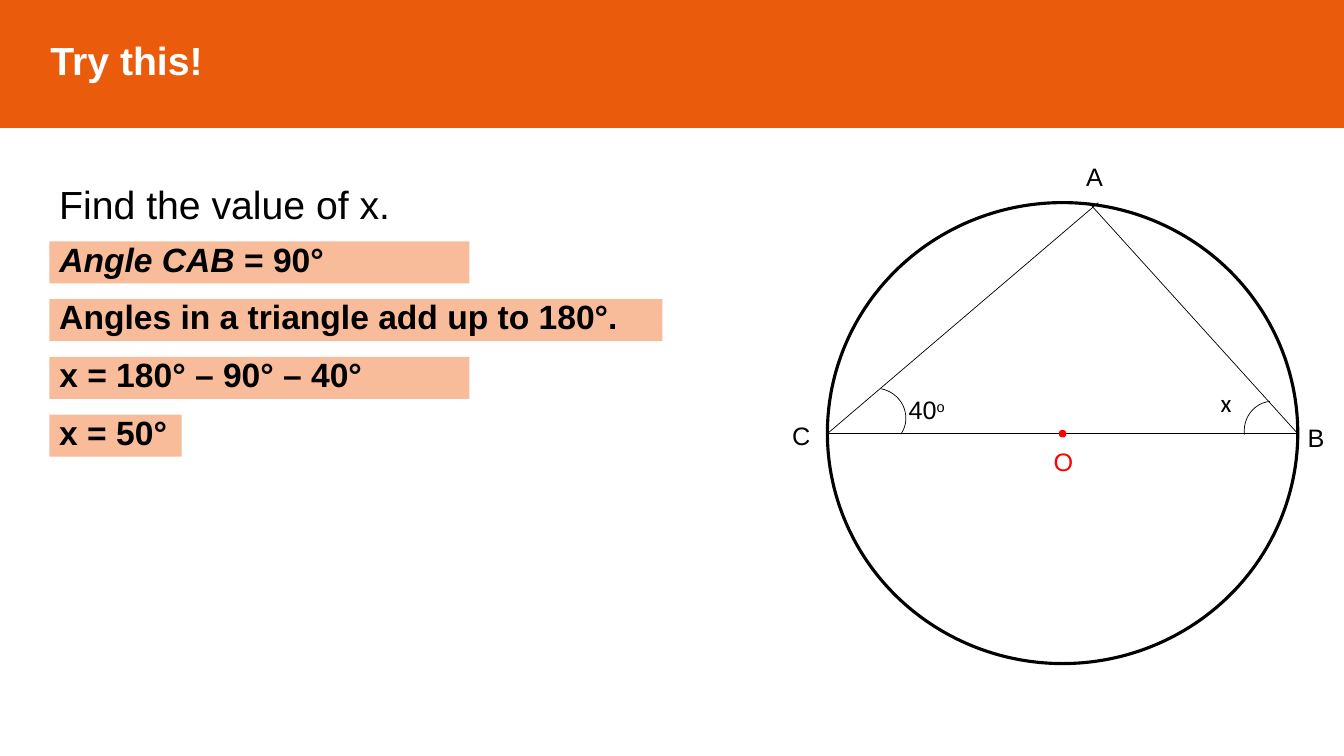
from lxml.etree import SubElement
from pptx import Presentation
from pptx.dml.color import RGBColor
from pptx.enum.shapes import MSO_CONNECTOR, MSO_SHAPE
from pptx.enum.text import MSO_ANCHOR, MSO_AUTO_SIZE, PP_ALIGN
from pptx.oxml.ns import qn
from pptx.util import Pt

ORANGE, PEACH, RED = "EA5B0C", "F9BC9A", "FF0000"
BLACK, WHITE = "000000", "FFFFFF"


def px(n):
    return round(n * 9525)


def color(code):
    return RGBColor.from_string(code)


def add_form(slide, kind, box, fill=None, line=None, width=1):
    form = slide.shapes.add_shape(kind, *map(px, box))
    form.shadow.inherit = False
    if fill:
        form.fill.solid()
        form.fill.fore_color.rgb = color(fill)
    else:
        form.fill.background()
    if line:
        form.line.color.rgb = color(line)
        form.line.width = Pt(width)
    else:
        form.line.fill.background()
    return form


def add_line(slide, start, end):
    line = slide.shapes.add_connector(
        MSO_CONNECTOR.STRAIGHT, *map(px, (*start, *end)))
    line.line.color.rgb = color(BLACK)
    line.line.width = Pt(0.5)
    SubElement(line._element.spPr, qn("a:effectLst"))


def write(form, parts, size, tint=BLACK, bold=False, font="Arial"):
    """Fill one left-aligned paragraph with a run for each part."""
    frame = form.text_frame
    frame.word_wrap = True
    frame.vertical_anchor = MSO_ANCHOR.TOP
    para = frame.paragraphs[0]
    para.alignment = PP_ALIGN.LEFT
    for part in parts:
        run = para.add_run()
        run.text = part
        run.font.size = Pt(size)
        run.font.name = font
        run.font.bold = bold
        run.font.color.rgb = color(tint)
    return para


def add_label(slide, box, parts, size=18, tint=BLACK, font="Arial"):
    label = slide.shapes.add_textbox(*map(px, box))
    para = write(label, parts, size, tint, font=font)
    label.text_frame.auto_size = MSO_AUTO_SIZE.SHAPE_TO_FIT_TEXT
    return para


def add_header(slide, box):
    bar = add_form(slide, MSO_SHAPE.RECTANGLE, box, ORANGE, ORANGE)
    write(bar, ["Try this!"], 28, WHITE, bold=True)
    bar.text_frame.vertical_anchor = MSO_ANCHOR.MIDDLE
    bar.text_frame.margin_left = px(48)


def add_circle(slide, box):
    left, top, wide, high = box
    mid_x, mid_y = left + wide // 2, top + high // 2 + 1
    right = left + wide

    # Circle, diameter and the two chords that meet at A
    add_form(slide, MSO_SHAPE.OVAL, box, WHITE, BLACK, 2.25)
    add_line(slide, (left, mid_y), (right, mid_y))
    add_line(slide, (left, mid_y), (left + 258, top))
    add_line(slide, (right, mid_y), (left + 249, top))

    # Centre point
    add_form(slide, MSO_SHAPE.OVAL, (mid_x - 3, mid_y - 3, 6, 6), RED, RED)

    # Angle marks at B and C
    arcs = [(396, 190, 263.6, None), (18, 177, 27.4, (151.589, 4.182))]
    for dx, dy, turn, ends in arcs:
        arc = add_form(slide, MSO_SHAPE.ARC, (left + dx, top + dy, 57, 55),
                       line=BLACK, width=0.5)
        arc.rotation = turn
        for i, end in enumerate(ends or ()):
            arc.adjustments[i] = end

    # Point names
    names = [("A", 237, -44, BLACK), ("O", 206, 227, RED),
             ("C", -43, 203, BLACK), ("B", wide, 204, BLACK)]
    for name, dx, dy, tint in names:
        add_label(slide, (left + dx, top + dy, 43, 38), [name], tint=tint)

    # Angle values
    add_label(slide, (left + 365, top + 171, 61, 38), ["x"], font="Calibri")
    angle = add_label(slide, (left + 68, top + 178, 61, 38), ["40", "o"])
    angle.runs[1]._r.get_or_add_rPr().set("baseline", "30000")


def add_work(slide, box):
    left, top, wide, high = box
    add_label(slide, (left, top, 441, 55), ["Find the value of x."], 28)

    # Solution steps
    steps = [(400, ["Angle CAB ", "= 90°"]),
             (wide, ["Angles in a triangle add up to 180°."]),
             (400, ["x = 180° – 90° – 40°"]),
             (126, ["x = 50°"])]
    pitch, step_high = 55, 40
    first = top + high - step_high - pitch * (len(steps) - 1)
    for i, (step_wide, parts) in enumerate(steps):
        place = (left, first + i * pitch, step_wide, step_high)
        step = add_form(slide, MSO_SHAPE.RECTANGLE, place, PEACH)
        para = write(step, parts, 24, bold=True)
        para.line_spacing = 0.8
        para.runs[0].font.italic = len(parts) > 1


def main():
    deck = Presentation()
    deck.slide_width, deck.slide_height = px(1280), px(720)
    slide = deck.slides.add_slide(deck.slide_layouts[6])
    add_header(slide, (0, -6, 1280, 127))
    add_circle(slide, (788, 193, 448, 439))
    add_work(slide, (47, 167, 584, 268))
    deck.save("out.pptx")


if __name__ == "__main__":
    main()
